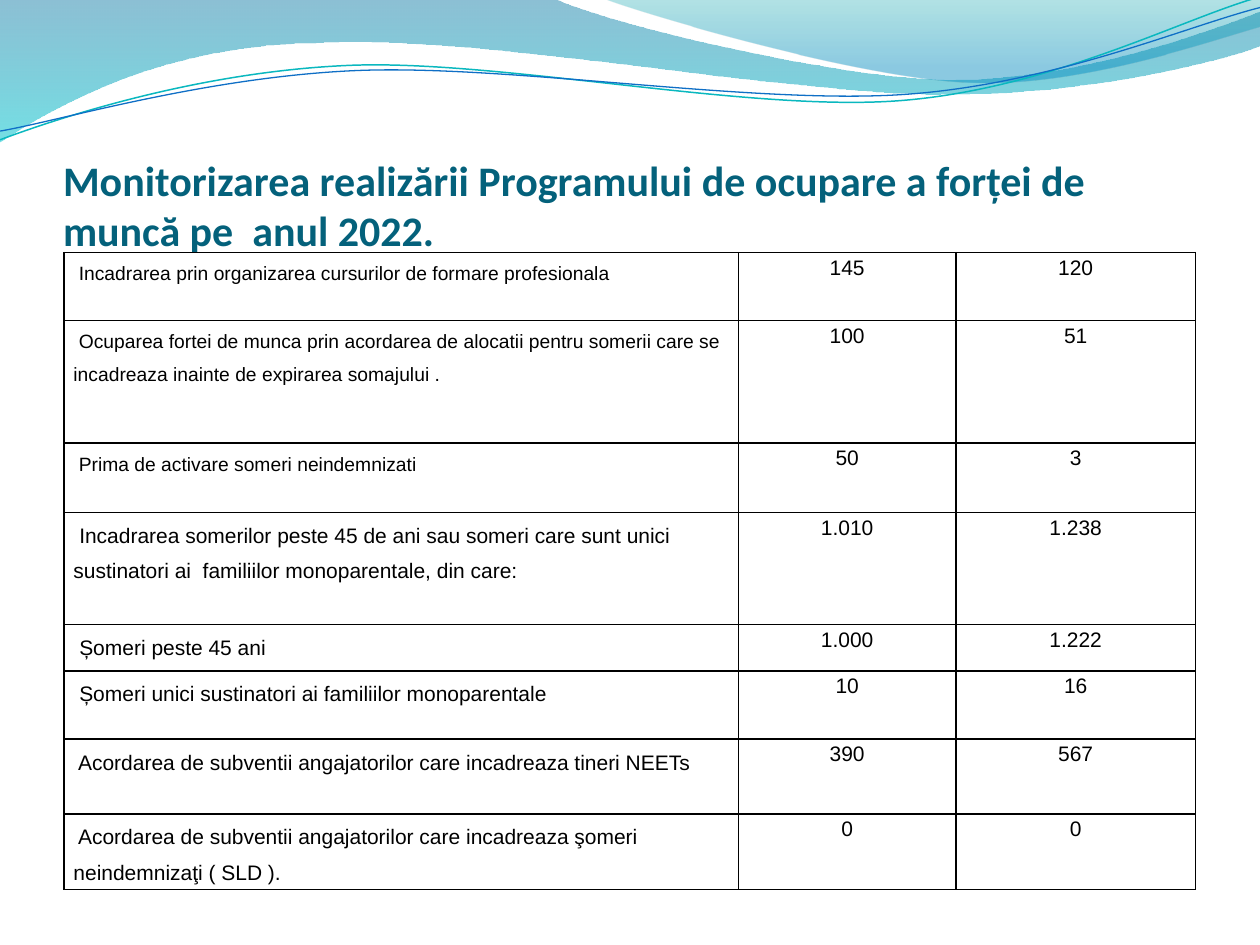
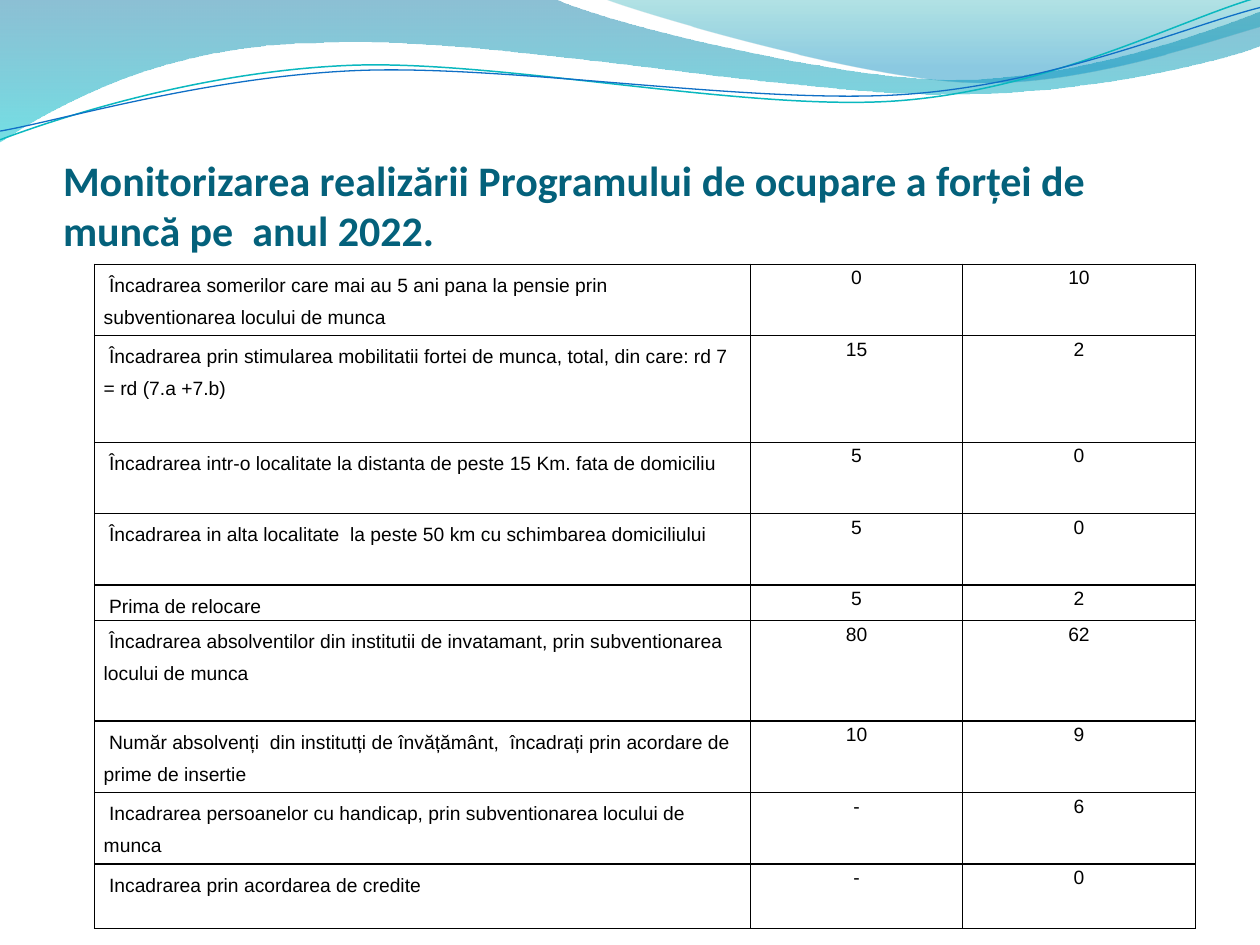
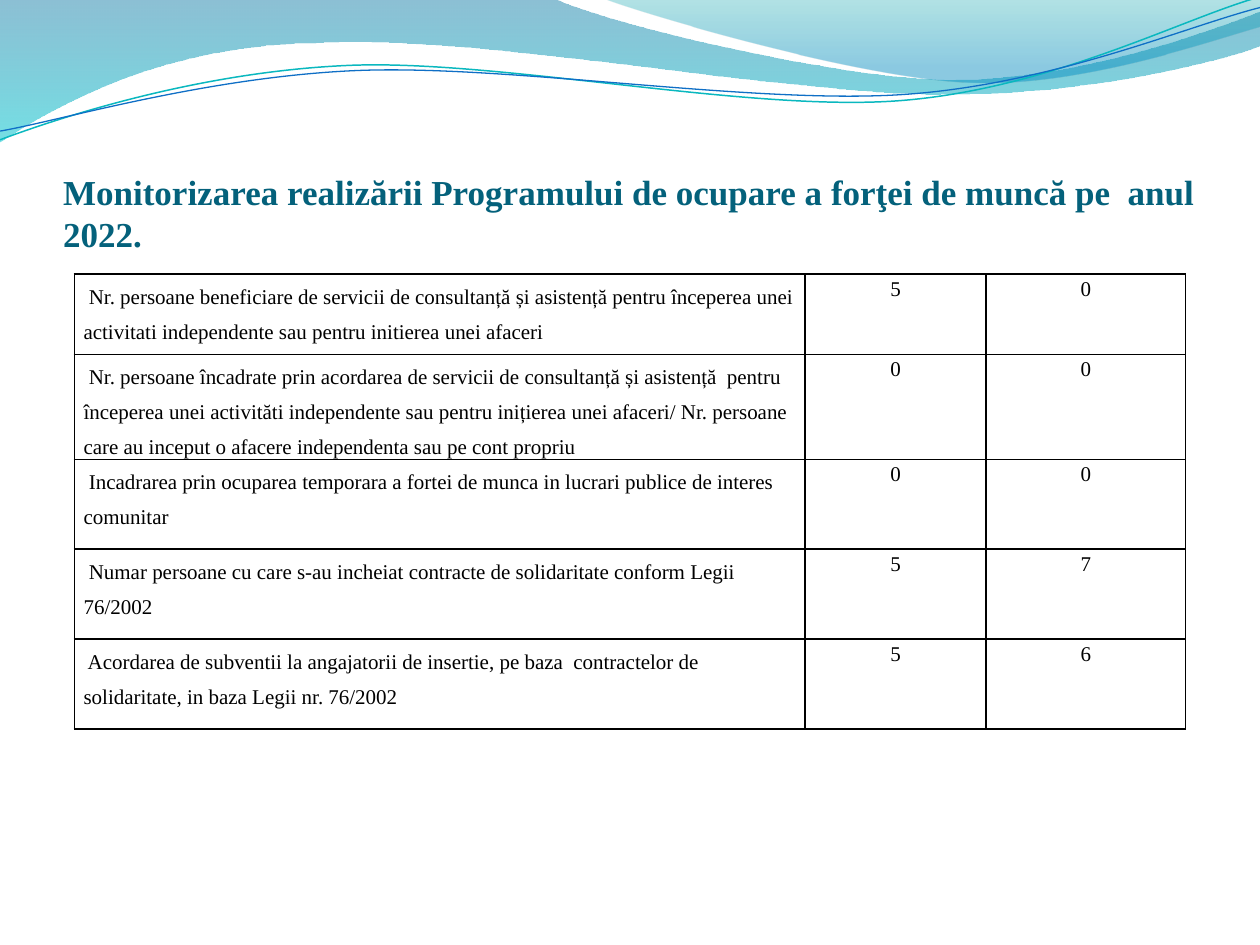
from lxml import etree
from pptx import Presentation
from pptx.dml.color import RGBColor
from pptx.enum import lang, text
from pptx.oxml.ns import qn
from pptx.util import Pt

TITLE = "Monitorizarea realizării Programului de ocupare a forţei de muncă pe  anul 2022."
TITLE_COLOR, INK = "04617B", "000000"
TITLE_BOX = (36, 55.4, 648, 90.3)

# Points of each wave: a pair is a straight step, six numbers are a Bézier curve.
# Gradient stops: position, colour, opacity in percent.
BANDS = [
    {"points": [(0, -0.7), (316.8, -0.7), (342.7, 12.2, 478.1, 45.4, 545.8, 45.4),
                (614.2, 45.4, 689.8, 18.7, 720, 6.5), (720.7, 25.9),
                (707.8, 31.7, 626.4, 54.7, 537.1, 54),
                (447.8, 54, 275, 20.2, 185, 24.5),
                (92.9, 25.2, 33.1, 59.8, -0.7, 81.4)],
     "stops": [(0, "0074A1", 45), (1, "00C6CF", 55)]},
    {"points": [(344.9, -0.7), (366.5, 7.9, 491, 44.6, 553.7, 46.8),
                (616.3, 49.7, 691.9, 23, 720, 15.1), (720, 0)],
     "stops": [(0, "00A1A9", 30), (0.8, "008BBF", 45)]},
]
STROKES = [
    {"points": [(0, 79.9), (34.6, 67, 113.8, 41, 199.4, 37.4),
                (284.4, 33.8, 427, 64.1, 513.4, 57.6),
                (599.8, 51.1, 675.4, 10.8, 718.6, -1.4)],
     "color": "0AB8BF", "width": 0.85},
    {"points": [(0, 74.9), (33.8, 69.1, 118.1, 43.9, 203.8, 40.3),
                (290.2, 36.7, 429.8, 59.8, 516.2, 54),
                (601.9, 48.2, 677.5, 15.1, 720, 4.3)],
     "color": "0F6FC6", "width": 0.75},
]

# Each row: height, label size, label, planned, achieved.
SLIDES = [
    {"title": ("Calibri", 24), "font": "Arial", "size": 12,
     "at": (36.7, 144.3), "cols": (385.2, 124.4, 136.8),
     "rows": [
         (39, 11, " Incadrarea prin organizarea cursurilor de formare profesionala", "145", "120"),
         (70, 11, " Ocuparea fortei de munca prin acordarea de alocatii pentru somerii care se "
                  "incadreaza inainte de expirarea somajului .", "100", "51"),
         (39.6, 11, " Prima de activare someri neindemnizati", "50", "3"),
         (64, 12, " Incadrarea somerilor peste 45 de ani sau someri care sunt unici sustinatori ai  "
                  "familiilor monoparentale, din care:", "1.010", "1.238"),
         (26.6, 12, " Șomeri peste 45 ani", "1.000", "1.222"),
         (39, 12, " Șomeri unici sustinatori ai familiilor monoparentale", "10", "16"),
         (42.8, 12, " Acordarea de subventii angajatorilor care incadreaza tineri NEETs", "390", "567"),
         (43.2, 12, " Acordarea de subventii angajatorilor care incadreaza şomeri "
                    "neindemnizaţi ( SLD ).", "0", "0"),
     ]},
    {"title": ("Calibri", 24), "font": "Arial", "size": 11,
     "at": (54, 151), "cols": (375, 121, 133.2),
     "rows": [
         (40.8, 11, " Încadrarea somerilor care mai au 5 ani pana la pensie prin "
                    "subventionarea locului de munca", "0", "10"),
         (61, 11, " Încadrarea prin stimularea mobilitatii fortei de munca, total, din care: rd 7 "
                  "= rd (7.a +7.b)", "15", "2"),
         (40.8, 11, " Încadrarea intr-o localitate la distanta de peste 15 Km. fata de domiciliu", "5", "0"),
         (40.8, 11, " Încadrarea in alta localitate  la peste 50 km cu schimbarea domiciliului", "5", "0"),
         (20.2, 11, " Prima de relocare", "5", "2"),
         (57.6, 11, " Încadrarea absolventilor din institutii de invatamant, prin subventionarea "
                    "locului de munca", "80", "62"),
         (40.8, 11, " Număr absolvenți  din institutți de învățământ,  încadrați prin acordare de "
                    "prime de insertie", "10", "9"),
         (40.8, 11, " Incadrarea persoanelor cu handicap, prin subventionarea locului de munca", "-", "6"),
         (37, 11, " Incadrarea prin acordarea de credite", "-", "0"),
     ]},
    {"title": ("Times New Roman", 20), "font": "Times New Roman", "size": 12,
     "at": (42.5, 156.7), "cols": (417.6, 103.4, 114),
     "rows": [
         (45.8, 12, " Nr. persoane beneficiare de servicii de consultanță și asistență pentru "
                    "începerea unei activitati independente sau pentru initierea unei afaceri", "5", "0"),
         (60, 12, " Nr. persoane încadrate prin acordarea de servicii de consultanță și asistență  "
                  "pentru începerea unei activităti independente sau pentru inițierea unei afaceri/ "
                  "Nr. persoane care au inceput o afacere independenta sau pe cont propriu", "0", "0"),
         (51.4, 12, " Incadrarea prin ocuparea temporara a fortei de munca in lucrari publice de "
                    "interes comunitar", "0", "0"),
         (51.4, 12, " Numar persoane cu care s-au incheiat contracte de solidaritate conform Legii "
                    "76/2002", "5", "7"),
         (51.4, 12, " Acordarea de subventii la angajatorii de insertie, pe baza  contractelor de "
                    "solidaritate, in baza Legii nr. 76/2002", "5", "6"),
     ]},
]


def rgb(color):
    return RGBColor.from_string(color)


def set_all(obj, **values):
    for name, value in values.items():
        setattr(obj, name, value)


def set_font(font, name, size, color, bold=False):
    set_all(font, name=name, size=Pt(size), bold=bold, language_id=lang.MSO_LANGUAGE_ID.ROMANIAN)
    font.color.rgb = rgb(color)


def add_wave(s, points, close):
    """Build the outline from its anchors, then bend the curved steps."""
    start, *steps = points
    builder = s.shapes.build_freeform(*map(Pt, start))
    builder.add_line_segments([tuple(map(Pt, step[-2:])) for step in steps], close=close)
    sp = builder.convert_to_shape()
    sp.shadow.inherit = False
    for line, step in zip(list(sp._element.iter(qn("a:lnTo"))), steps):
        if len(step) == 6:
            curve = etree.Element(qn("a:cubicBezTo"))
            for x, y in (step[:2], step[2:4]):
                etree.SubElement(curve, qn("a:pt"), x=str(Pt(x) - sp.left), y=str(Pt(y) - sp.top))
            curve.append(line[0])
            line.getparent().replace(line, curve)
    return sp


def add_waves(s, master):
    """Draw the waves and move them behind everything on the master."""
    waves = []
    for band in BANDS:
        sp = add_wave(s, band["points"], True)
        sp.line.fill.background()
        sp.fill.gradient()
        sp.fill.gradient_angle = 270
        for stop, (position, color, _) in zip(sp.fill.gradient_stops, band["stops"]):
            stop.position = position
            stop.color.rgb = rgb(color)
        for clr, (_, _, opacity) in zip(sp._element.iter(qn("a:srgbClr")), band["stops"]):
            etree.SubElement(clr, qn("a:alpha"), val=str(opacity * 1000))
        waves.append(sp)
    for stroke in STROKES:
        sp = add_wave(s, stroke["points"], False)
        sp.fill.background()
        sp.line.color.rgb = rgb(stroke["color"])
        sp.line.width = Pt(stroke["width"])
        waves.append(sp)
    for i, sp in enumerate(waves):
        master.shapes._spTree.insert(2 + i, sp._element)


def add_title(s, font, size):
    sp = s.shapes.title
    set_all(sp, **dict(zip(("left", "top", "width", "height"), map(Pt, TITLE_BOX))))
    tf = sp.text_frame
    set_all(tf, margin_left=0, margin_top=Pt(3.6), margin_right=0, margin_bottom=0, word_wrap=True,
            auto_size=text.MSO_AUTO_SIZE.NONE, vertical_anchor=text.MSO_ANCHOR.BOTTOM)
    p = tf.paragraphs[0]
    p.alignment = text.PP_ALIGN.LEFT
    r = p.add_run()
    r.text = TITLE
    set_font(r.font, font, size, TITLE_COLOR, True)


def add_borders(cell):
    tcPr = cell._tc.get_or_add_tcPr()
    for i, side in enumerate(("lnL", "lnR", "lnT", "lnB")):
        ln = etree.Element(qn("a:" + side), w=str(Pt(1)))
        fill = etree.SubElement(ln, qn("a:solidFill"))
        etree.SubElement(fill, qn("a:srgbClr"), val=INK)
        tcPr.insert(i, ln)


def fill_cell(cell, words, font, size, is_label):
    set_all(cell, margin_left=Pt(5.3), margin_right=Pt(5.3), margin_top=0, margin_bottom=0)
    cell.fill.background()
    add_borders(cell)
    p = cell.text_frame.paragraphs[0]
    p.alignment = text.PP_ALIGN.LEFT if is_label else text.PP_ALIGN.CENTER
    p.line_spacing = 1.5 if is_label else 1.15
    r = p.add_run()
    r.text = words
    set_font(r.font, font, size, INK)


def add_measures(s, data):
    rows, cols = data["rows"], data["cols"]
    height = sum(row[0] for row in rows)
    table = s.shapes.add_table(len(rows), len(cols), *map(Pt, (*data["at"], sum(cols), height))).table
    set_all(table, first_row=False, horz_banding=False)
    for column, width in zip(table.columns, cols):
        column.width = Pt(width)
    for i, (row_height, label_size, *cells) in enumerate(rows):
        table.rows[i].height = Pt(row_height)
        for j, words in enumerate(cells):
            size = data["size"] if j else label_size
            fill_cell(table.cell(i, j), words, data["font"], size, j == 0)


def main():
    prs = Presentation()
    set_all(prs, slide_width=Pt(720), slide_height=Pt(540))
    for i, data in enumerate(SLIDES):
        s = prs.slides.add_slide(prs.slide_layouts[5])
        if i == 0:
            add_waves(s, prs.slide_master)
        add_title(s, *data["title"])
        add_measures(s, data)
    prs.save("out.pptx")


if __name__ == "__main__":
    main()
